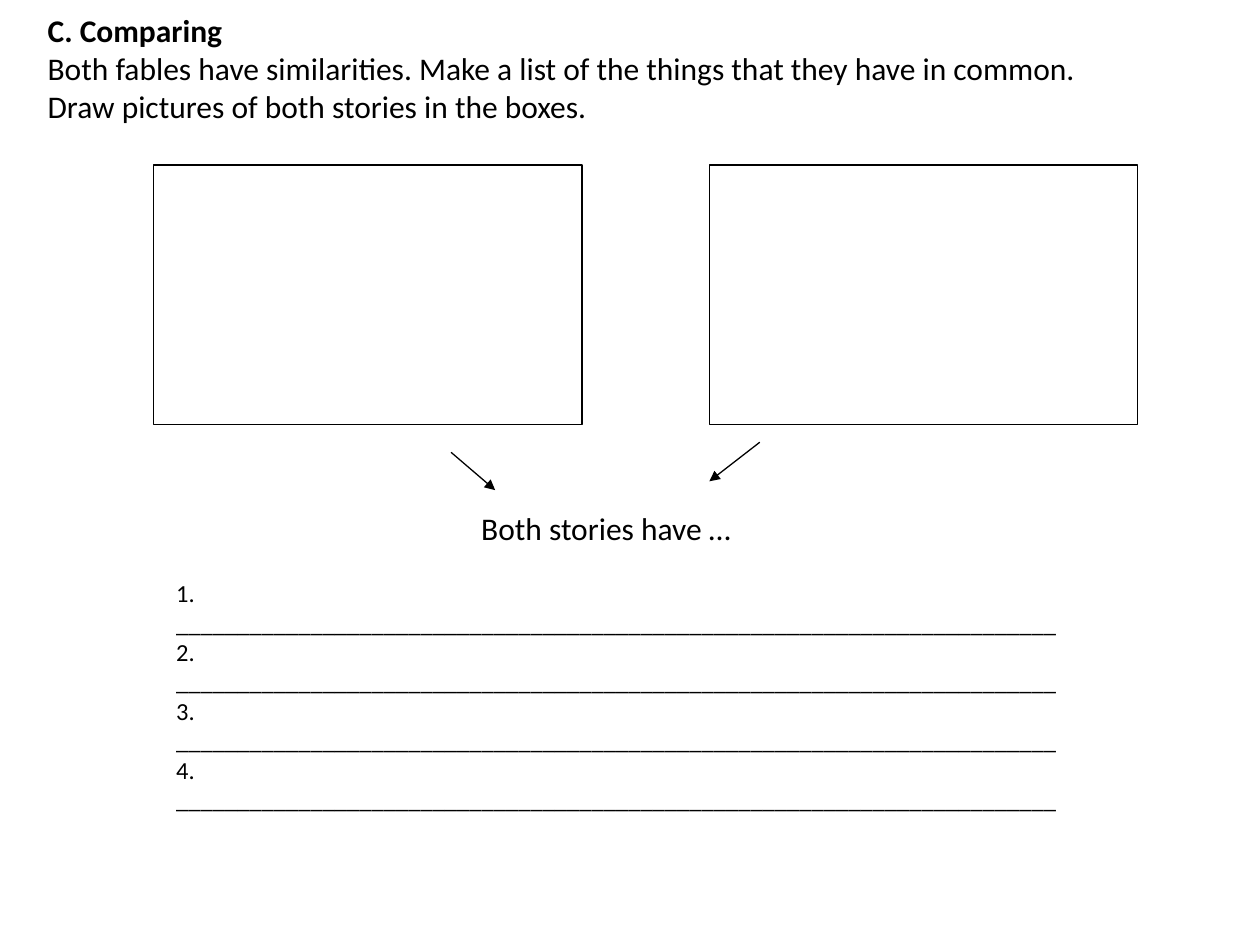
from lxml import etree
from pptx import Presentation
from pptx.dml.color import RGBColor
from pptx.enum import shapes, text
from pptx.oxml import ns
from pptx.util import Inches, Pt

BLACK = RGBColor(0x00, 0x00, 0x00)
WHITE = RGBColor(0xFF, 0xFF, 0xFF)
LINE_WIDTH = Pt(0.75)


def add_text(page, place, lines, **formats):
    """Add a text box with one paragraph for each line and return its paragraphs."""
    frame = page.shapes.add_textbox(*map(Inches, place)).text_frame
    frame.word_wrap = True
    frame.vertical_anchor = text.MSO_ANCHOR.TOP
    frame.text = "\n".join(lines)
    for para in frame.paragraphs:
        para.alignment = formats.get("alignment", text.PP_ALIGN.LEFT)
        font = para.runs[0].font
        font.color.rgb = BLACK
        values = {"name": "Calibri", "size": Pt(formats["size"]), "bold": False}
        for name, value in values.items():
            setattr(font, name, value)
    return frame.paragraphs


def add_drawing_box(page, left):
    """Add an empty outlined box for a drawing."""
    place = map(Inches, (left, 1.31, 3.4, 2.06))
    box = page.shapes.add_shape(shapes.MSO_SHAPE.RECTANGLE, *place)
    box.shadow.inherit = False
    box.fill.solid()
    box.fill.fore_color.rgb = WHITE
    box.line.color.rgb = BLACK
    box.line.width = LINE_WIDTH


def add_arrow(page, start, end):
    """Add a straight arrow with a triangle at its end."""
    points = map(Inches, (*start, *end))
    arrow = page.shapes.add_connector(shapes.MSO_CONNECTOR.STRAIGHT, *points)
    arrow.line.color.rgb = BLACK
    arrow.line.width = LINE_WIDTH
    outline = arrow.line._get_or_add_ln()
    etree.SubElement(outline, ns.qn("a:tailEnd"), type="triangle")
    etree.SubElement(arrow._element.spPr, ns.qn("a:effectLst"))


def main():
    """Build the fable comparison worksheet."""
    deck = Presentation()
    deck.slide_width, deck.slide_height = Inches(10), Inches(7.5)
    page = deck.slides.add_slide(deck.slide_layouts[6])

    for left in (5.63, 1.22):
        add_drawing_box(page, left)
    add_arrow(page, (6.03, 3.51), (5.63, 3.82))
    add_arrow(page, (3.58, 3.59), (3.93, 3.89))

    add_text(page, (3.11, 3.99, 3.4, 0.44), ["Both stories have …"],
             size=18, alignment=text.PP_ALIGN.CENTER)
    answers = [f"{number}. {'_' * 72}" for number in range(1, 5)]
    add_text(page, (1.3, 4.54, 7.2, 2.06), answers, size=14)
    instructions = [
        "C. Comparing",
        "Both fables have similarities. Make a list of the things that they have in common.",
        "Draw pictures of both stories in the boxes.",
    ]
    heading = add_text(page, (0.28, 0.04, 8.46, 1.31), instructions, size=18)[0]
    heading.runs[0].font.bold = True

    deck.save("out.pptx")


if __name__ == "__main__":
    main()
